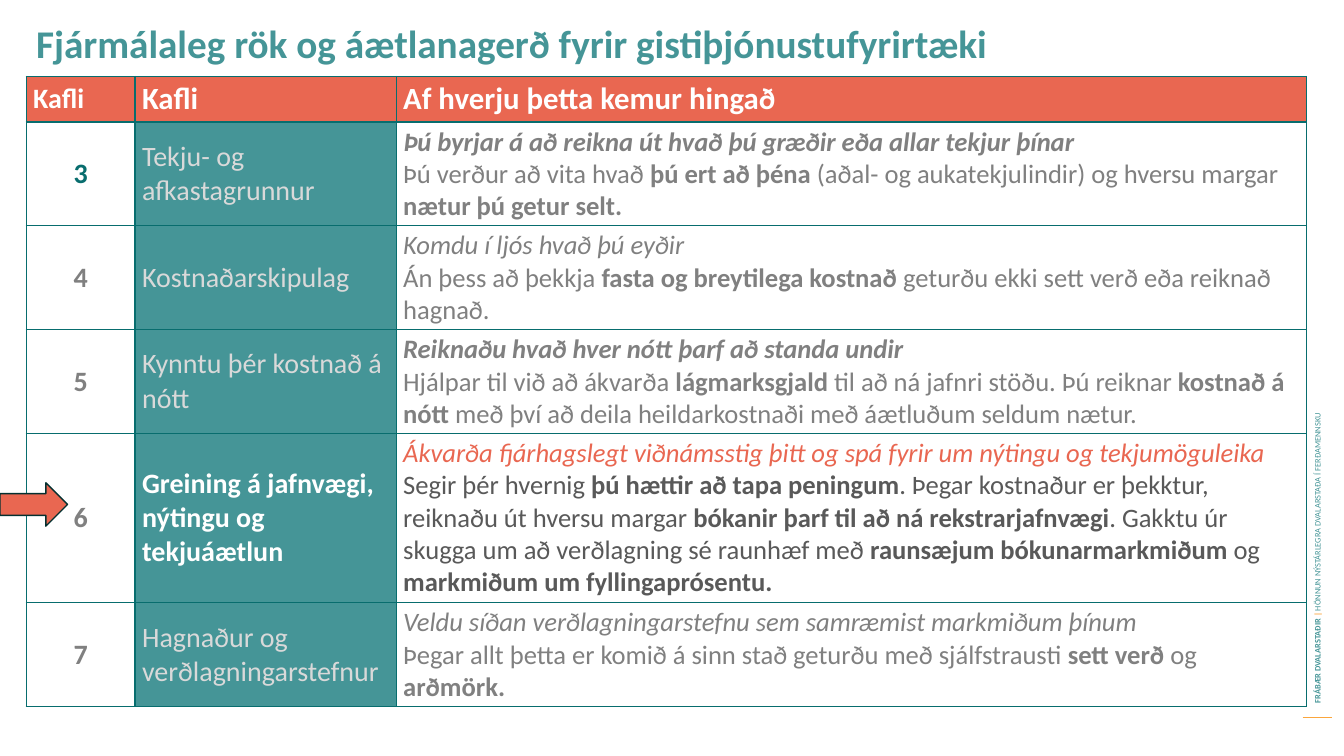
from pptx import Presentation
from pptx.util import Inches, Pt
from pptx.dml.color import RGBColor
from pptx.enum.shapes import MSO_SHAPE, MSO_CONNECTOR
from pptx.enum.text import PP_ALIGN, MSO_ANCHOR
from lxml.etree import SubElement
from pptx.oxml.ns import qn

COLORS = {"teal": "459597", "deep": "086D6E", "coral": "E96751", "gold": "FBA63B",
          "rule": "FBA63D", "edge": "043030", "gray": "808080", "dark": "595959",
          "pale": "D9D9D9", "white": "FFFFFF"}

TITLE = "Fjármálaleg rök og áætlanagerð fyrir gistiþjónustufyrirtæki"
SIDE = [("FRÁBÆR DVALARSTAÐIR ", "teal", True), ("| ", "gold", True),
        ("HÖNNUN NÝSTÁRLEGRA DVALARSTAÐA Í FERÐAMENNSKU", "teal", False)]
HEADS = [("Kafli", 20), ("Kafli", 22), ("Af hverju þetta kemur hingað", 22)]
ROWS = [
    ("3", "Tekju- og afkastagrunnur",
     "**Þú byrjar á að reikna út hvað þú græðir eða allar tekjur þínar**",
     "Þú verður að vita hvað **þú ert að þéna **(aðal- og aukatekjulindir) og hversu margar "
     "**nætur þú getur selt.**"),
    ("4", "Kostnaðarskipulag",
     "Komdu í ljós hvað þú eyðir",
     "Án þess að þekkja **fasta og breytilega kostnað **geturðu ekki sett verð eða reiknað hagnað."),
    ("5", "Kynntu þér kostnað á nótt",
     "**Reiknaðu hvað hver nótt þarf að standa undir**",
     "Hjálpar til við að ákvarða **lágmarksgjald **til að ná jafnri stöðu. Þú reiknar "
     "**kostnað á nótt **með því að deila heildarkostnaði með áætluðum seldum nætur."),
    ("6", "**Greining á jafnvægi, nýtingu og tekjuáætlun**",
     "Ákvarða fjárhagslegt viðnámsstig þitt og spá fyrir um nýtingu og tekjumöguleika",
     "Segir þér hvernig **þú hættir að tapa peningum**. Þegar kostnaður er þekktur, reiknaðu út "
     "hversu margar **bókanir þarf til að ná rekstrarjafnvægi**. Gakktu úr skugga um að "
     "verðlagning sé raunhæf með **raunsæjum bókunarmarkmiðum **og "
     "**markmiðum um fyllingaprósentu.**"),
    ("7", "Hagnaður og verðlagningarstefnur",
     "Veldu síðan verðlagningarstefnu sem samræmist markmiðum þínum",
     "Þegar allt þetta er komið á sinn stað geturðu með sjálfstrausti **sett verð **og **arðmörk.**"),
]
WIDTHS = [1.08, 2.59, 9.03]
HEIGHTS = [0.45, 1.03, 1.03, 1.03, 1.68, 1.03]
NOW = "6"


def paint(name):
    return RGBColor.from_string(COLORS[name])


def write(para, text, size, color, bold=False, italic=False):
    run = para.add_run()
    run.text = text
    font = run.font
    font.name, font.size, font.bold, font.italic = "Calibri", Pt(size), bold, italic
    font.color.rgb = paint(color)


def mark(para, text, size, color, italic=False):
    for i, part in enumerate(text.split("**")):
        if part:
            write(para, part, size, color, i % 2 == 1, italic)


def dress(cell, fill=None):
    cell.vertical_anchor = MSO_ANCHOR.MIDDLE
    cell.margin_left = cell.margin_right = Inches(0.07)
    cell.margin_top = cell.margin_bottom = Inches(0.04)
    props = cell._tc.get_or_add_tcPr()
    for side in ("lnL", "lnR", "lnT", "lnB"):
        line = SubElement(props, qn("a:" + side), w=str(Pt(1)))
        solid = SubElement(line, qn("a:solidFill"))
        SubElement(solid, qn("a:srgbClr"), val=COLORS["deep"])
    if fill:
        cell.fill.solid()
        cell.fill.fore_color.rgb = paint(fill)
    else:
        cell.fill.background()
    return cell.text_frame.paragraphs[0]


def box(slide, left, top, width, height):
    shape = slide.shapes.add_textbox(Inches(left), Inches(top), Inches(width), Inches(height))
    shape.text_frame.word_wrap = True
    return shape


def add_grid(slide):
    frame = slide.shapes.add_table(len(HEIGHTS), len(WIDTHS), Inches(0.26), Inches(0.76),
                                   Inches(sum(WIDTHS)), Inches(sum(HEIGHTS)))
    table = frame.table
    table.horz_banding = False
    for col, width in zip(table.columns, WIDTHS):
        col.width = Inches(width)
    for row, height in zip(table.rows, HEIGHTS):
        row.height = Inches(height)
    for c, (text, size) in enumerate(HEADS):
        write(dress(table.cell(0, c), "coral"), text, size, "white", True)
    for r, (num, name, lead, body) in enumerate(ROWS, 1):
        live = num == NOW
        para = dress(table.cell(r, 0))
        para.alignment = PP_ALIGN.CENTER
        write(para, num, 20, "deep" if r == 1 else "gray", True)
        mark(dress(table.cell(r, 1), "teal"), name, 20, "white" if live else "pale")
        cell = table.cell(r, 2)
        mark(dress(cell), lead, 19, "coral" if live else "gray", True)
        mark(cell.text_frame.add_paragraph(), body, 19, "dark" if live else "gray")


def main():
    deck = Presentation()
    deck.slide_width, deck.slide_height = Inches(13.33), Inches(7.5)
    slide = deck.slides.add_slide(deck.slide_layouts[6])

    rule = slide.shapes.add_connector(MSO_CONNECTOR.STRAIGHT, Inches(12.92), Inches(7.12),
                                      Inches(13.21), Inches(7.12))
    rule.line.color.rgb = paint("rule")
    rule.line.width = Pt(0.75)
    SubElement(rule._element.spPr, qn("a:effectLst"))

    side = box(slide, 10.18, 4.09, 5.77, 0.2)
    side.rotation = 270
    side.text_frame.vertical_anchor = MSO_ANCHOR.MIDDLE
    for text, color, bold in SIDE:
        write(side.text_frame.paragraphs[0], text, 6, color, bold)

    title = box(slide, 0.26, 0.14, 12.01, 0.88)
    write(title.text_frame.paragraphs[0], TITLE, 28, "teal", True)

    add_grid(slide)

    arrow = slide.shapes.add_shape(MSO_SHAPE.RIGHT_ARROW, Inches(0), Inches(4.79),
                                   Inches(0.67), Inches(0.43))
    arrow.shadow.inherit = False
    arrow.fill.solid()
    arrow.fill.fore_color.rgb = paint("coral")
    arrow.line.color.rgb = paint("edge")
    arrow.line.width = Pt(1)

    deck.save("out.pptx")


if __name__ == "__main__":
    main()
